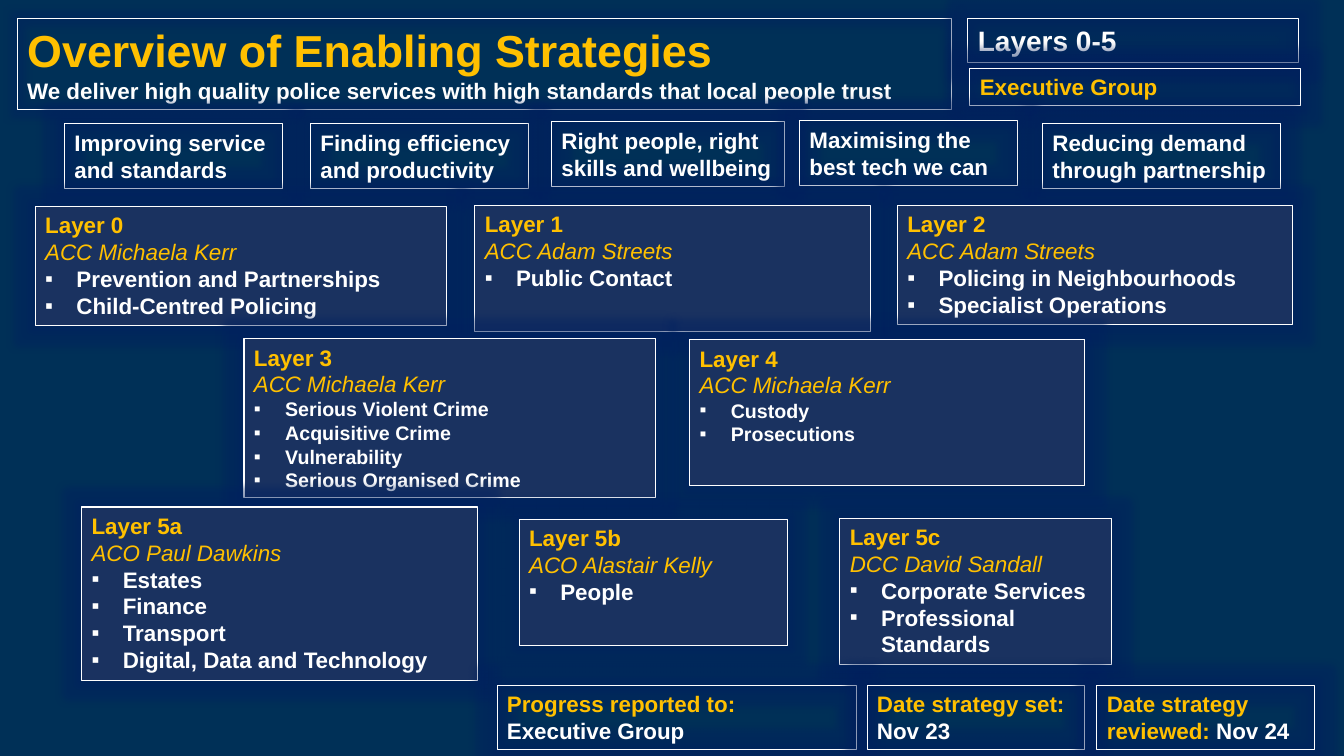
from lxml import etree
from pptx import Presentation
from pptx.dml.color import RGBColor
from pptx.enum import text
from pptx.oxml import ns
from pptx.util import Inches, Pt

NAVY, PANEL, GLOW, GOLD, WHITE = "003057", "1A3260", "002060", "FFC000", "FFFFFF"

THEMES = [
    ((0.64, 1.23, 2.16, 0.64), "Improving service and standards"),
    ((3.08, 1.23, 2.16, 0.64), "Finding efficiency and productivity"),
    ((5.47, 1.21, 2.31, 0.64), "Right people, right skills and wellbeing"),
    ((7.93, 1.2, 2.16, 0.64), "Maximising the best tech we can"),
    ((10.34, 1.23, 2.36, 0.64), "Reducing demand through partnership"),
]
LAYERS = [
    ((0.35, 2.05, 4.08, 1.18), "Layer 0", "ACC Michaela Kerr", 16,
     ["Prevention and Partnerships", "Child-Centred Policing"]),
    ((4.71, 2.04, 3.92, 1.25), "Layer 1", "ACC Adam Streets", 16, ["Public Contact"]),
    ((8.9, 2.04, 3.92, 1.18), "Layer 2", "ACC Adam Streets", 16,
     ["Policing in Neighbourhoods", "Specialist Operations"]),
    ((2.42, 3.36, 4.08, 1.58), "Layer 3", "ACC Michaela Kerr", 14,
     ["Serious Violent Crime", "Acquisitive Crime", "Vulnerability", "Serious Organised Crime"]),
    ((6.84, 3.37, 3.92, 1.45), "Layer 4", "ACC Michaela Kerr", 14, ["Custody", "Prosecutions"]),
    ((0.81, 5.03, 3.93, 1.72), "Layer 5a", "ACO Paul Dawkins", 16,
     ["Estates", "Finance", "Transport", "Digital, Data and Technology"]),
    ((5.15, 5.15, 2.66, 1.25), "Layer 5b", "ACO Alastair Kelly", 16, ["People"]),
    ((8.33, 5.14, 2.69, 1.45), "Layer 5c", "DCC David Sandall", 16,
     ["Corporate Services", "Professional Standards"]),
]


def colour(value):
    """Return the colour for a hex string."""
    return RGBColor.from_string(value)


def frame_box(box, place, fill=None):
    """Place a text shape and give it a white outline, a soft glow and top-left text."""
    box.left, box.top, box.width, box.height = map(Inches, place)
    if fill:
        box.fill.solid()
        box.fill.fore_color.rgb = colour(fill)
    else:
        box.fill.background()
    box.line.color.rgb = colour(WHITE)
    box.line.width = Pt(0.75)
    effects = etree.SubElement(box.element.spPr, ns.qn("a:effectLst"))
    glow = etree.SubElement(effects, ns.qn("a:glow"), rad=str(Pt(10)))
    tint = etree.SubElement(glow, ns.qn("a:srgbClr"), val=GLOW)
    etree.SubElement(tint, ns.qn("a:alpha"), val="40000")
    frame = box.text_frame
    frame.word_wrap = True
    frame.auto_size = text.MSO_AUTO_SIZE.NONE
    frame.vertical_anchor = text.MSO_ANCHOR.TOP


def add_bullet(para):
    """Give a paragraph a hanging square bullet."""
    properties = para._p.get_or_add_pPr()
    properties.set("marL", str(Inches(0.31)))
    properties.set("indent", str(Inches(-0.31)))
    etree.SubElement(properties, ns.qn("a:buFont"), typeface="Arial")
    etree.SubElement(properties, ns.qn("a:buChar"), char="▪")


def write_lines(box, lines):
    """Fill a box with lines, each a list of (words, colour, size, italic) spans."""
    frame = box.text_frame
    frame.text = "\n".join("" for line in lines)
    for para, spans in zip(frame.paragraphs, lines):
        para.alignment = text.PP_ALIGN.LEFT
        for words, shade, size, italic in spans:
            span = para.add_run()
            span.text = words
            span.font.name = "Arial"
            span.font.size = Pt(size)
            span.font.bold = not italic
            span.font.italic = italic
            span.font.color.rgb = colour(shade)


def add_box(page, place, lines, fill=None):
    """Add a framed text box holding the lines."""
    box = page.shapes.add_textbox(*map(Inches, place))
    frame_box(box, place, fill)
    write_lines(box, lines)
    return box


def add_header(page):
    """Build the title with its motto and the two labels beside it."""
    title = page.shapes.title
    frame_box(title, (0.17, 0.18, 9.27, 0.91))
    motto = "We deliver high quality police services with high standards that local people trust"
    write_lines(title, [[("Overview of Enabling Strategies", GOLD, 32, False)],
                        [(motto, WHITE, 16, False)]])
    add_box(page, (9.6, 0.18, 3.28, 0.44), [[("Layers 0-5", WHITE, 20, False)]])
    add_box(page, (9.62, 0.68, 3.28, 0.37), [[("Executive Group", GOLD, 16, False)]])


def add_layer(page, place, name, lead, size, duties):
    """Build a layer panel with its name, lead officer and bulleted duties."""
    lines = [[(name, GOLD, 16, False)], [(lead, GOLD, 16, True)]]
    lines += [[(duty, WHITE, size, False)] for duty in duties]
    box = add_box(page, place, lines, PANEL)
    for para in box.text_frame.paragraphs[2:]:
        add_bullet(para)


def add_footer(page):
    """Build the reporting and date boxes along the bottom."""
    add_box(page, (4.93, 6.8, 3.57, 0.64), [[("Progress reported to:", GOLD, 16, False)],
                                            [("Executive Group", WHITE, 16, False)]])
    dates = [(8.6, "Date strategy set: ", "Nov 23"), (10.88, "Date strategy reviewed: ", "Nov 24")]
    for left, label, date in dates:
        add_box(page, (left, 6.8, 2.16, 0.64),
                [[(label, GOLD, 16, False), (date, WHITE, 16, False)]])


def main():
    """Build and save the deck."""
    deck = Presentation()
    deck.slide_width, deck.slide_height = Inches(13.33), Inches(7.5)
    page = deck.slides.add_slide(deck.slide_layouts.get_by_name("Title Only"))
    page.background.fill.solid()
    page.background.fill.fore_color.rgb = colour(NAVY)
    add_header(page)
    for place, words in THEMES:
        add_box(page, place, [[(words, WHITE, 16, False)]])
    for layer in LAYERS:
        add_layer(page, *layer)
    add_footer(page)
    deck.save("out.pptx")


if __name__ == "__main__":
    main()
